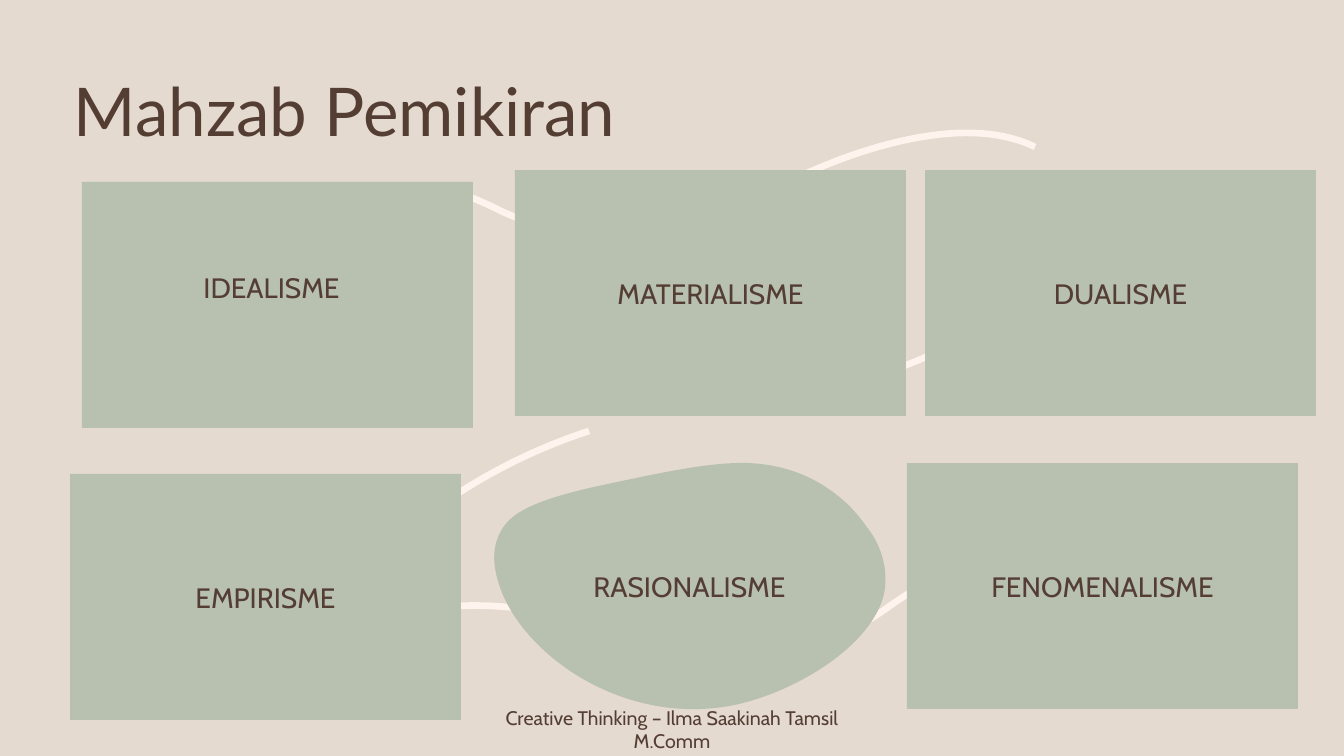
from math import cos, radians, sin

from lxml.etree import SubElement
from pptx import Presentation
from pptx.dml.color import RGBColor
from pptx.enum.shapes import MSO_SHAPE
from pptx.enum.text import MSO_ANCHOR, PP_ALIGN
from pptx.oxml.ns import qn
from pptx.util import Pt

SAND = RGBColor(0xE5, 0xDA, 0xCF)
CREAM = RGBColor(0xFE, 0xF3, 0xED)
SAGE = RGBColor(0xB8, 0xC0, 0xB0)
BROWN = RGBColor(0x54, 0x3E, 0x34)

PX = 914400 / 100.8
WIDE, HIGH = 1344, 756
CARD = (391, 246)
INSET = 10

TITLE = ("Mahzab Pemikiran", (64, 78, 1008, 74))
FOOTER = ("Creative Thinking – Ilma Saakinah Tamsil M.Comm", (468, 712, 408, 34))

# name, left, top, extra right inset, extra bottom inset
CARDS = [
    ("IDEALISME", 82, 182, 12, 36),
    ("DUALISME", 925, 170, 0, 0),
    ("MATERIALISME", 515, 170, 0, 0),
    ("EMPIRISME", 70, 474, 0, 0),
    ("FENOMENALISME", 907, 463, 0, 0),
]

# Frame, turn, then a start point and two handles and an end for each bend
WAVES = [
    ((830, 305, 236, 52), 321,
     [(840, 386), (920, 366), (993, 330), (1055, 277)]),
    ((380, 463, 221, 50), 343,
     [(589, 431), (513, 456), (449, 494), (392, 543)]),
    ((307, 153, 730, 81), 176,
     [(309, 225), (353, 188), (401, 178), (453, 192),
      (470, 196), (485, 203), (501, 211), (534, 226), (570, 237), (609, 238),
      (642, 238), (675, 231), (707, 219), (743, 205), (763, 195), (784, 184),
      (807, 172), (948, 104), (1035, 147)]),
    ((350, 590, 581, 76), 175,
     [(927, 584), (911, 591), (898, 600), (884, 610),
      (855, 630), (822, 646), (784, 652), (752, 658), (720, 656), (686, 649),
      (650, 641), (629, 634), (607, 627), (583, 620), (437, 575), (350, 641)]),
]
BLOB = ("RASIONALISME", (494, 463, *CARD), [
    (748, 463), (771, 464), (792, 469), (812, 479),
    (841, 494), (857, 513), (866, 526), (876, 538), (888, 560), (885, 588),
    (878, 641), (802, 689), (739, 704), (624, 730), (518, 652), (498, 581),
    (495, 571), (490, 550), (501, 531), (509, 516), (527, 501), (603, 485),
    (664, 472), (710, 462), (748, 463)])

HEAD = {"name": "Lato", "size": Pt(48)}
LABEL = {"name": "Cabin", "size": Pt(20)}
SMALL = {"name": "Cabin", "size": Pt(14)}


def emu(*sizes):
    return [round(size * PX) for size in sizes]


def local(point, box, turn):
    """Place a slide point in the frame as it lies before its turn."""
    left, top, wide, high = box
    x, y = point[0] - left - wide / 2, point[1] - top - high / 2
    c, s = cos(radians(turn)), sin(radians(turn))
    return emu(x * c + y * s + wide / 2, y * c - x * s + high / 2)


def draw(shapes, box, turn, points, close=False):
    """Add a freeform whose outline is a chain of cubic Bezier bends."""
    pen = shapes.build_freeform(*points[0], scale=PX)
    pen.add_line_segments(points[3::3], close=close)
    shape = pen.convert_to_shape()
    shape.left, shape.top, shape.width, shape.height = emu(*box)
    shape.rotation = turn
    shape.shadow.inherit = False

    track = next(shape._element.iter(qn("a:path")))
    for old in list(track):
        track.remove(old)
    for key, size in zip("wh", emu(*box[2:])):
        track.set(key, str(size))
    bends = [points[i:i + 3] for i in range(1, len(points), 3)]
    for tag, group in [("a:moveTo", points[:1])] + [("a:cubicBezTo", b) for b in bends]:
        move = SubElement(track, qn(tag))
        for point in group:
            x, y = local(point, box, turn)
            SubElement(move, qn("a:pt"), x=str(x), y=str(y))
    if close:
        SubElement(track, qn("a:close"))
    return shape


def paint(shape):
    shape.shadow.inherit = False
    shape.fill.solid()
    shape.fill.fore_color.rgb = SAGE
    shape.line.fill.background()


def write(shape, text, form, align=PP_ALIGN.CENTER, right=0, bottom=0, gap=1.0):
    frame = shape.text_frame
    look = {"word_wrap": True, "vertical_anchor": MSO_ANCHOR.MIDDLE,
            "margin_right": emu(INSET + right)[0],
            "margin_bottom": emu(5 + bottom)[0]}
    for key, value in look.items():
        setattr(frame, key, value)
    line = frame.paragraphs[0]
    line.alignment = align
    line.line_spacing = gap
    run = line.add_run()
    run.text = text
    for key, value in form.items():
        setattr(run.font, key, value)
    run.font.color.rgb = BROWN


def main():
    deck = Presentation()
    deck.slide_width, deck.slide_height = emu(WIDE, HIGH)
    slide = deck.slides.add_slide(deck.slide_layouts[6])
    slide.background.fill.solid()
    slide.background.fill.fore_color.rgb = SAND
    shapes = slide.shapes

    for box, turn, points in WAVES:
        wave = draw(shapes, box, turn, points)
        wave.fill.background()
        wave.line.color.rgb = CREAM
        wave.line.width = Pt(4.75)

    text, box = TITLE
    write(shapes.add_textbox(*emu(*box)), text, HEAD, PP_ALIGN.LEFT, gap=0.9)

    for name, left, top, right, bottom in CARDS:
        card = shapes.add_shape(MSO_SHAPE.RECTANGLE, *emu(left, top, *CARD))
        paint(card)
        write(card, name, LABEL, right=right, bottom=bottom)

    name, box, points = BLOB
    blob = draw(shapes, box, 0, points, close=True)
    paint(blob)
    write(blob, name, LABEL)

    text, box = FOOTER
    write(shapes.add_textbox(*emu(*box)), text, SMALL)
    deck.save("out.pptx")


if __name__ == "__main__":
    main()
